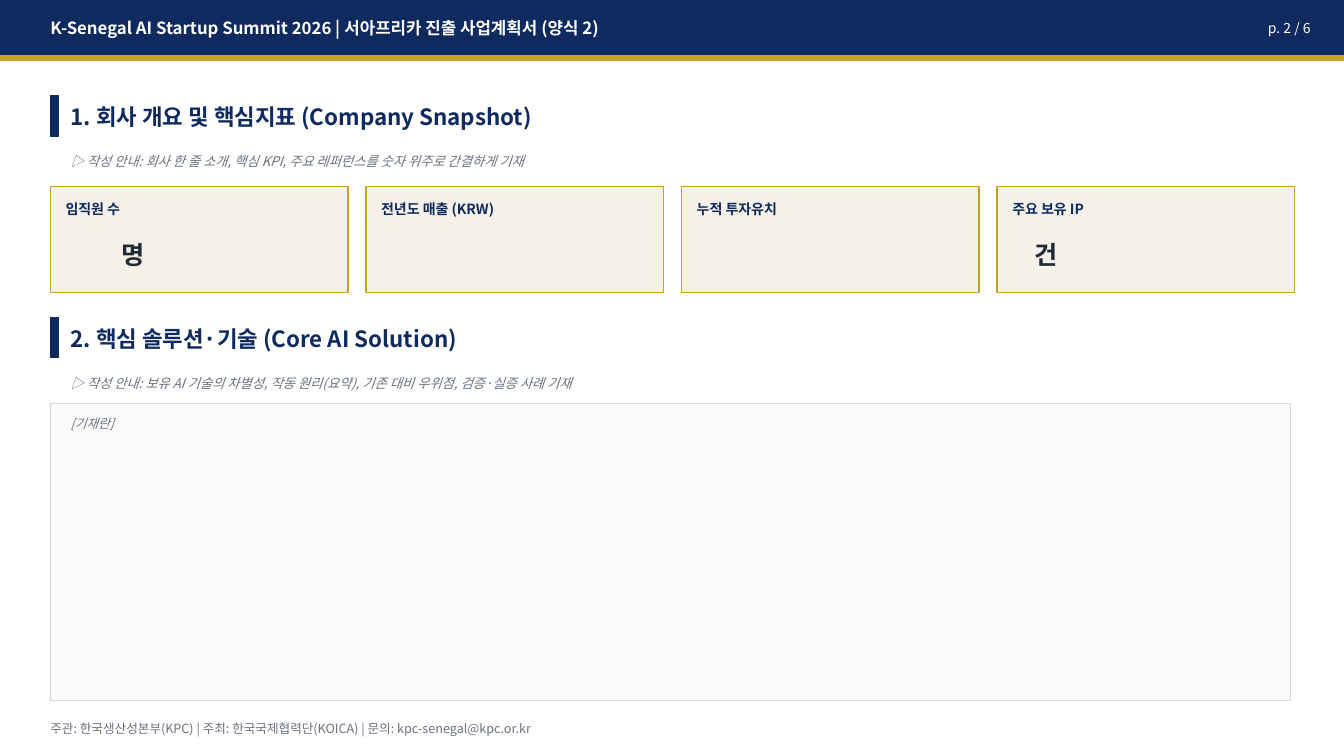
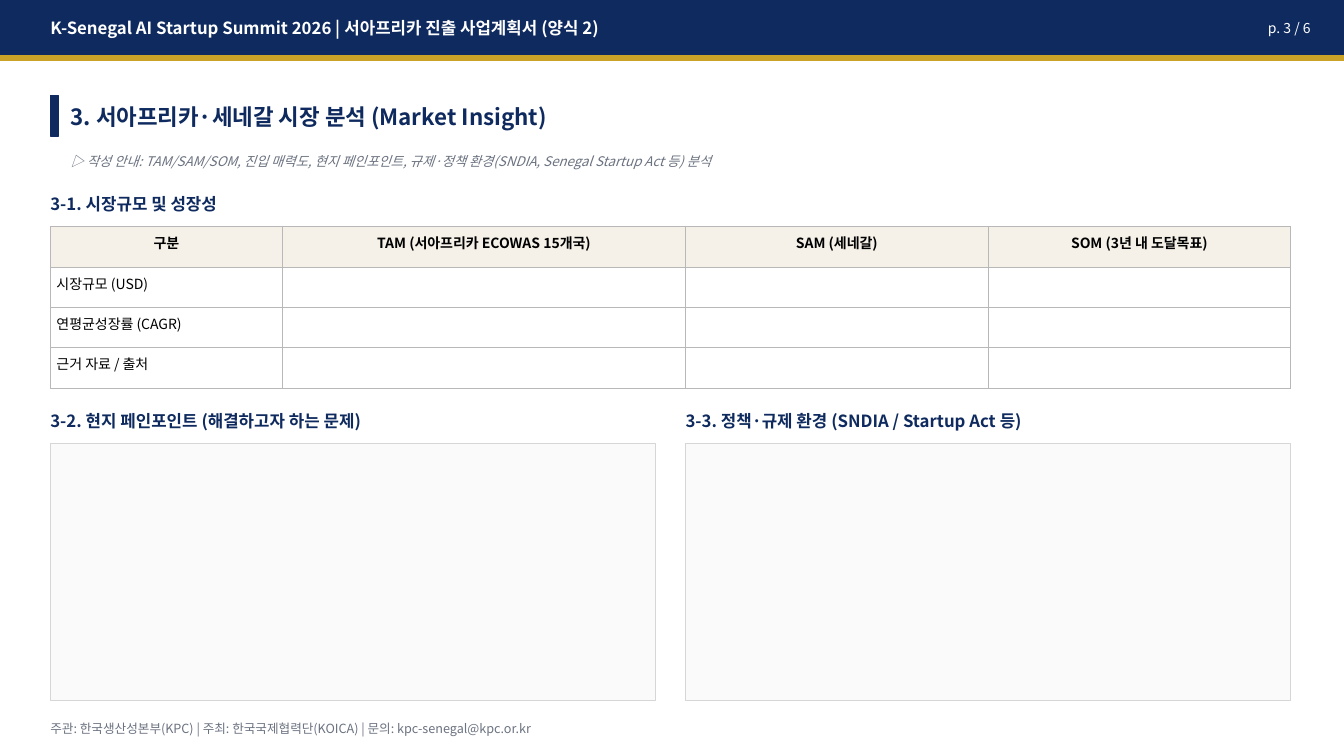
"""Build two pages of the business plan form for the K-Senegal AI Startup Summit."""
from lxml.etree import SubElement
from pptx import Presentation
from pptx.dml.color import RGBColor
from pptx.enum.shapes import MSO_SHAPE
from pptx.enum.text import MSO_ANCHOR, MSO_AUTO_SIZE, PP_ALIGN
from pptx.oxml.ns import qn
from pptx.util import Inches, Pt

NAVY = RGBColor(0x0E, 0x2A, 0x5E)
GOLD = RGBColor(0xC9, 0xA2, 0x27)
CREAM = RGBColor(0xF5, 0xF1, 0xE8)
INK = RGBColor(0x1F, 0x29, 0x37)
GRAY = RGBColor(0x6B, 0x72, 0x80)
PALE = RGBColor(0xFA, 0xFA, 0xFA)
SILVER = RGBColor(0xD6, 0xD6, 0xD6)
BORDER = RGBColor(0xB8, 0xB8, 0xB8)
WHITE = RGBColor(0xFF, 0xFF, 0xFF)
BLACK = RGBColor(0x00, 0x00, 0x00)

FONT = "Noto Sans CJK KR"
COLUMNS, ROWS = 133.3, 75
LEFT, WIDTH, BOTTOM = 5, 123, 69.5
PAGES = 6
HEADER = "K-Senegal AI Startup Summit 2026 | 서아프리카 진출 사업계획서 (양식 2)"
FOOTER = "주관: 한국생산성본부(KPC) | 주최: 한국국제협력단(KOICA) | 문의: kpc-senegal@kpc.or.kr"


def grid(cells):
    return Inches(cells / 10)


class Form:
    """Draws form pages on a grid of tenth-inch columns and rows."""

    def __init__(self):
        self.presentation = Presentation()
        self.presentation.slide_width = grid(COLUMNS)
        self.presentation.slide_height = grid(ROWS)
        self.slide = None

    def page(self, number, title, guide):
        layout = self.presentation.slide_layouts[5]
        self.slide = self.presentation.slides.add_slide(layout)
        self.box(0, 0, COLUMNS, 5.5, NAVY, NAVY)
        self.text(HEADER, LEFT, 0, 95, 5.5, 12, WHITE, bold=True)
        self.text(f"p. {number} / {PAGES}", 118, 0, 12, 5.5, 10, WHITE,
                  align=PP_ALIGN.RIGHT)
        self.box(0, 5.5, COLUMNS, 0.5, GOLD, GOLD)
        self.text(FOOTER, LEFT, 70.5, WIDTH, 3.5, 9, GRAY)
        self.section(title, guide, 9.5, self.slide.shapes.title)

    def section(self, title, guide, top, placeholder=None):
        self.box(LEFT, top, 0.8, 4, NAVY, NAVY)
        self.text(title, 7, top - 0.2, 120, 4.5, 16, NAVY, bold=True,
                  shape=placeholder)
        self.text(f"▷ 작성 안내: {guide}", 7, top + 5, 120, 3, 9.5, GRAY, italic=True)

    def box(self, left, top, width, height, fill, line, weight=1):
        shape = self.slide.shapes.add_shape(
            MSO_SHAPE.RECTANGLE, grid(left), grid(top), grid(width), grid(height))
        shape.shadow.inherit = False
        shape.fill.solid()
        shape.fill.fore_color.rgb = fill
        shape.line.color.rgb = line
        shape.line.width = Pt(weight)

    def answer(self, left, top, width):
        self.box(left, top, width, BOTTOM - top, PALE, SILVER, 0.75)

    def subheading(self, text, left, top, width):
        self.text(text, left, top, width, 3.5, 12, NAVY, bold=True)

    def text(self, text, left, top, width, height, size, color, bold=False,
             italic=False, align=PP_ALIGN.LEFT, indent=0, shape=None):
        place = [grid(length) for length in (left, top, width, height)]
        if shape is None:
            shape = self.slide.shapes.add_textbox(*place)
        else:
            shape.left, shape.top, shape.width, shape.height = place
        frame = shape.text_frame
        frame.word_wrap = True
        frame.auto_size = MSO_AUTO_SIZE.NONE
        frame.vertical_anchor = MSO_ANCHOR.MIDDLE
        frame.margin_left = frame.margin_right = 0
        frame.margin_top = frame.margin_bottom = 0
        frame.text = text
        paragraph = frame.paragraphs[0]
        if indent:
            paragraph._p.get_or_add_pPr().set("marL", str(grid(indent)))
        self.style(paragraph, size, color, bold, italic, align)

    def style(self, paragraph, size, color, bold=False, italic=False,
              align=PP_ALIGN.LEFT):
        paragraph.alignment = align
        for run in paragraph.runs:
            font = run.font
            font.size, font.bold, font.italic = Pt(size), bold, italic
            font.color.rgb = color
            font.name = FONT
            SubElement(font._element, qn("a:ea"), typeface=FONT)
        if not paragraph.runs:
            SubElement(paragraph._p, qn("a:endParaRPr"), sz=str(int(size * 100)))

    def indicators(self, items, top):
        for index, (label, unit, indent) in enumerate(items):
            left = LEFT + index * 31.3
            self.box(left, top, 29.5, 10.5, CREAM, GOLD)
            self.text(label, left + 1.5, top + 0.7, 26.5, 3, 10, NAVY, bold=True)
            if unit:
                self.text(unit, left + 1.5, top + 4, 26.5, 5.5, 18, INK,
                          bold=True, indent=indent)

    def table(self, headings, labels, widths, top, row_height):
        rows = [headings] + [[label] + [""] * (len(headings) - 1) for label in labels]
        table = self.slide.shapes.add_table(
            len(rows), len(widths), grid(LEFT), grid(top), grid(sum(widths)),
            grid(row_height * len(rows))).table
        table.horz_banding = False
        for column, width in zip(table.columns, widths):
            column.width = grid(width)
        for row, texts in enumerate(rows):
            for column, text in enumerate(texts):
                self.cell(table.cell(row, column), text, row == 0)

    def cell(self, cell, text, heading):
        cell.margin_left = cell.margin_right = grid(0.6)
        cell.margin_top = cell.margin_bottom = grid(0.6)
        properties = cell._tc.get_or_add_tcPr()
        for side in ("a:lnL", "a:lnR", "a:lnT", "a:lnB"):
            line = SubElement(properties, qn(side), w=str(Pt(0.75)))
            fill = SubElement(line, qn("a:solidFill"))
            SubElement(fill, qn("a:srgbClr"), val=str(BORDER))
        if heading:
            cell.fill.solid()
            cell.fill.fore_color.rgb = CREAM
        else:
            cell.fill.background()
        cell.text_frame.text = text
        self.style(cell.text_frame.paragraphs[0], 10, BLACK, bold=heading,
                   align=PP_ALIGN.CENTER if heading else PP_ALIGN.LEFT)


def company_page(form):
    form.page(2, "1. 회사 개요 및 핵심지표 (Company Snapshot)",
              "회사 한 줄 소개, 핵심 KPI, 주요 레퍼런스를 숫자 위주로 간결하게 기재")
    form.indicators([("임직원 수", "명", 5.6), ("전년도 매출 (KRW)", "", 0),
                     ("누적 투자유치", "", 0), ("주요 보유 IP", "건", 2.2)], 18.5)
    form.section("2. 핵심 솔루션·기술 (Core AI Solution)",
                 "보유 AI 기술의 차별성, 작동 원리(요약), 기존 대비 우위점, 검증·실증 사례 기재",
                 31.5)
    form.answer(LEFT, 40, WIDTH)
    form.text("[기재란]", 7, 40.5, 60, 3, 9, GRAY, italic=True)


def market_page(form):
    form.page(3, "3. 서아프리카·세네갈 시장 분석 (Market Insight)",
              "TAM/SAM/SOM, 진입 매력도, 현지 페인포인트, "
              "규제·정책 환경(SNDIA, Senegal Startup Act 등) 분석")
    form.subheading("3-1. 시장규모 및 성장성", LEFT, 18.5, 120)
    form.table(["구분", "TAM (서아프리카 ECOWAS 15개국)", "SAM (세네갈)",
                "SOM (3년 내 도달목표)"],
               ["시장규모 (USD)", "연평균성장률 (CAGR)", "근거 자료 / 출처"],
               [23, 40, 30, 30], 22.5, 4)
    topics = ["3-2. 현지 페인포인트 (해결하고자 하는 문제)",
              "3-3. 정책·규제 환경 (SNDIA / Startup Act 등)"]
    for index, topic in enumerate(topics):
        left = LEFT + index * 63
        form.subheading(topic, left, 40, 60)
        form.answer(left, 44, 60)


def main():
    form = Form()
    company_page(form)
    market_page(form)
    form.presentation.save("out.pptx")


if __name__ == "__main__":
    main()
